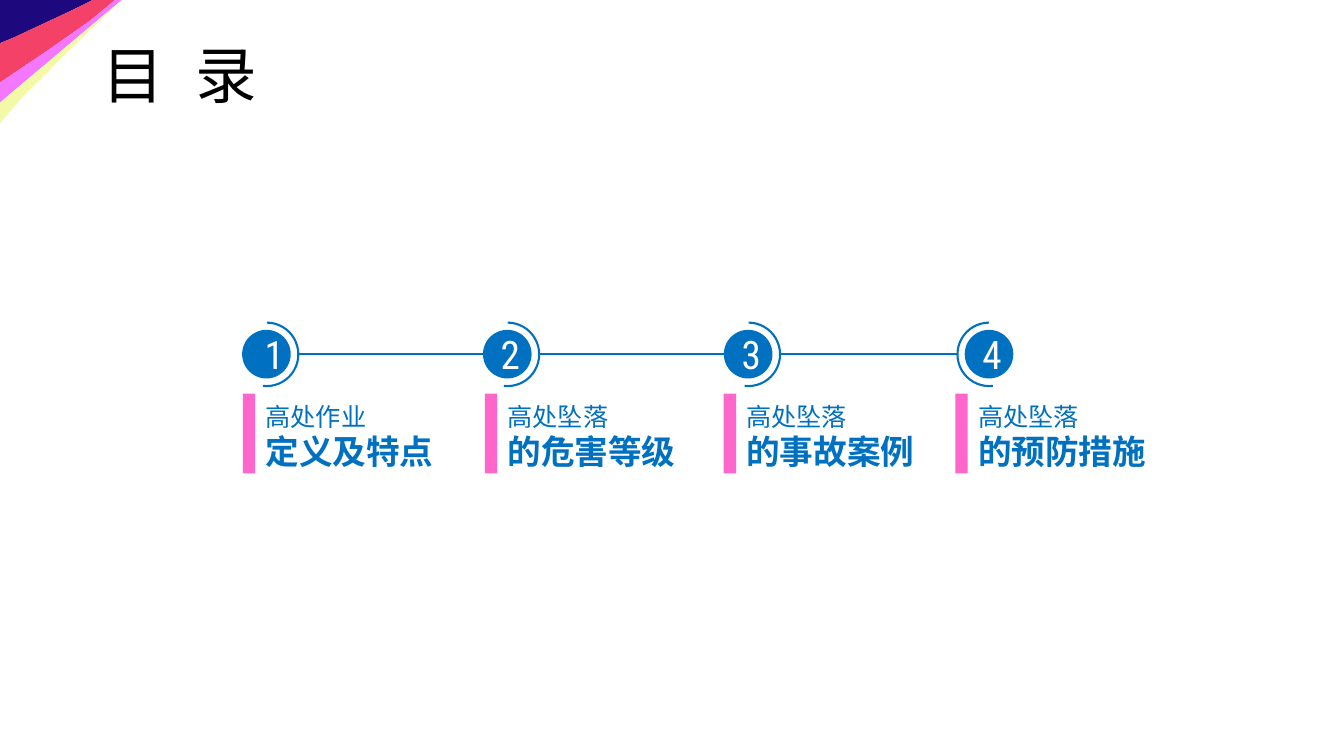
from itertools import pairwise

from lxml import etree
from pptx import Presentation
from pptx import util as u
from pptx.dml.color import RGBColor
from pptx.enum import shapes, text
from pptx.oxml.ns import qn

BLUE, PINK = "0070C0", "FF66CC"
CIRCLE, RING, GAP = 1.19, 1.6, 0.2
ARIAL, LATO = "Arial", "Lato"

STEPS = [
    ("1", 0.3, 6.12, "高处作业", [("定义及特点", ARIAL)]),
    ("2", 0.18, 12.22, "高处坠落", [("的危害等级", ARIAL)]),
    ("3", 0.18, 18.24, "高处坠落",
     [("的", ARIAL), ("事故", LATO), ("案例", ARIAL)]),
    ("4", 0.18, 24.08, "高处坠落", [("的预防措施", ARIAL)]),
]


def rgb(color):
    """Turn a hex string into a colour."""
    return RGBColor.from_string(color)


def paint(sp, fill=None, line=None, width=1):
    """Set fill and outline, and drop the shadow."""
    sp.shadow.inherit = False
    if fill:
        sp.fill.solid()
        sp.fill.fore_color.rgb = rgb(fill)
    else:
        sp.fill.background()
    if line:
        sp.line.color.rgb = rgb(line)
        sp.line.width = u.Pt(width)
    else:
        sp.line.fill.background()


def add_shape(s, kind, box, **style):
    """Add a painted preset shape in a box given in centimetres."""
    sp = s.shapes.add_shape(kind, *map(u.Cm, box))
    paint(sp, **style)
    return sp


def add_text(s, box, wrap=False):
    """Add an empty text box and return its frame."""
    tf = s.shapes.add_textbox(*map(u.Cm, box)).text_frame
    tf.word_wrap = wrap
    tf.vertical_anchor = text.MSO_ANCHOR.TOP
    return tf


def add_run(p, words, size, color, font=ARIAL, bold=False):
    """Add one formatted run to a paragraph."""
    r = p.add_run()
    r.text = words
    r.font.size = u.Pt(size)
    r.font.name = font
    r.font.bold = bold
    r.font.color.rgb = rgb(color)
    return r


def add_corner(s):
    """Draw the coloured bands fanning out of the top left corner."""
    edges = [
        [(0, 0)],
        [(2.34, 0), (1.73, 0.3), (0.36, 0.94), (0, 1.09)],
        [(2.9, 0), (2.26, 0.53), (1.16, 1.3), (0, 2.08)],
        [(3.07, 0), (2.77, 0.25), (0.23, 2.39), (0, 2.59)],
        [(3.07, 0), (1.75, 1.26), (0.56, 2.46), (0, 3.1)],
    ]
    colors = ["1D087D", "F44168", "F477FF", "F4F9A7"]
    for (inner, outer), color in zip(pairwise(edges), colors):
        points = [(u.Cm(x), u.Cm(y)) for x, y in inner + outer[::-1]]
        fb = s.shapes.build_freeform(*points[0])
        fb.add_line_segments(points[1:])
        paint(fb.convert_to_shape(), fill=color)


def add_title(s, box):
    """Write the heading with a wide gap between its two characters."""
    p = add_text(s, box, wrap=True).paragraphs[0]
    p.line_spacing = 0.9
    for words in ("目", " ", "录"):
        r = add_run(p, words, 44, "000000")
        if words == " ":
            r._r.get_or_add_rPr().set("spc", "1220")


def add_link(s, left, right, y):
    """Draw a level line between two steps."""
    c = s.shapes.add_connector(shapes.MSO_CONNECTOR.STRAIGHT,
                               *map(u.Cm, (left, y, right, y)))
    c.line.color.rgb = rgb(BLUE)
    c.line.width = u.Pt(1.5)
    etree.SubElement(c._element.spPr, qn("a:effectLst"))


def add_badge(s, x, y, number, indent, flip):
    """Draw a numbered disc with its open ring."""
    add_shape(s, shapes.MSO_SHAPE.OVAL, (x, y, CIRCLE, CIRCLE),
              fill=BLUE, line=BLUE)
    ring = add_shape(s, shapes.MSO_SHAPE.ARC, (x - GAP, y - GAP, RING, RING),
                     line=BLUE, width=1.5)
    ring.adjustments[0], ring.adjustments[1] = 162.295, 57.975
    if flip:
        ring._element.spPr.find(qn("a:xfrm")).set("flipH", "1")
    tf = add_text(s, (x + indent, y - 0.13, 0.9, 1.45))
    add_run(tf.paragraphs[0], number, 28, "FFFFFF", "Roboto Condensed")


def add_label(s, x, y, lead, parts):
    """Draw the upright bar and the two-line caption beside it."""
    tf = add_text(s, (x + 0.32, y + 0.06, 4.75, 2.06))
    add_run(tf.paragraphs[0], lead, 18, BLUE)
    p = tf.add_paragraph()
    for words, font in parts:
        add_run(p, words, 24, BLUE, font, bold=True)
    add_shape(s, shapes.MSO_SHAPE.RECTANGLE, (x, y, 0.31, 2.01), fill=PINK)


def add_timeline(s, left, top, pitch):
    """Place the linked steps from left to right."""
    last = len(STEPS) - 1
    for i in range(last):
        x = left + i * pitch
        end = x + pitch - (GAP if i == last - 1 else 0)
        add_link(s, x + CIRCLE + GAP, end, top + CIRCLE / 2)
    for i, (number, indent, bar_x, lead, parts) in enumerate(STEPS):
        add_badge(s, left + i * pitch, top, number, indent, i == last)
        add_label(s, bar_x, top + 1.59, lead, parts)


def main():
    """Build and save the contents slide."""
    prs = Presentation()
    prs.slide_width, prs.slide_height = u.Cm(33.87), u.Cm(19.05)
    s = prs.slides.add_slide(prs.slide_layouts[6])
    add_corner(s)
    add_title(s, (2.34, 1.02, 29.21, 3.68))
    add_timeline(s, 6.12, 8.33, 6.07)
    prs.save("out.pptx")


if __name__ == "__main__":
    main()
